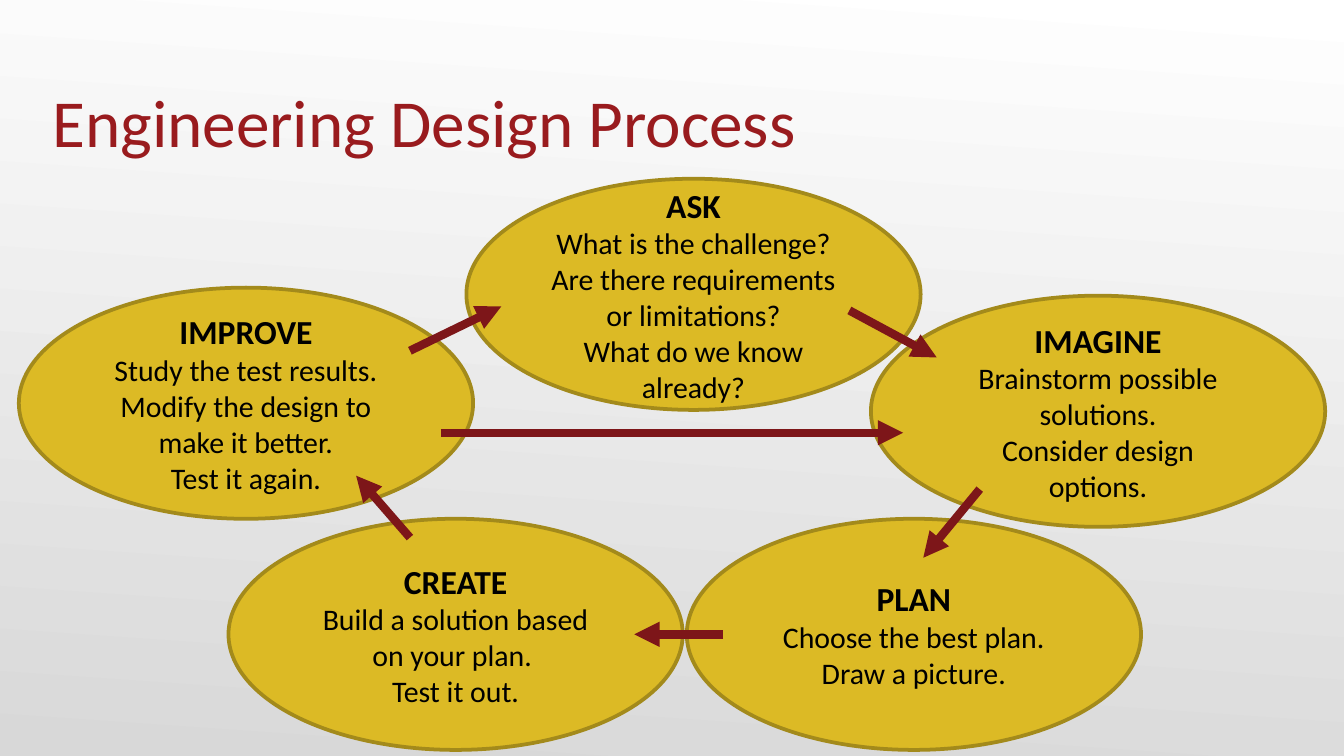
from dataclasses import dataclass

from lxml import etree
from pptx import Presentation
from pptx import util as u
from pptx.dml.color import RGBColor
from pptx.enum import shapes, text
from pptx.oxml import ns
from pptx.slide import Slide


@dataclass(frozen=True)
class Theme:
    font: str = "Calibri"
    title: RGBColor = RGBColor(0x99, 0x1B, 0x1E)
    ink: RGBColor = RGBColor(0, 0, 0)
    oval: RGBColor = RGBColor(0xDC, 0xBA, 0x25)
    outline: RGBColor = RGBColor(0xA3, 0x8A, 0x1B)
    arrow: RGBColor = RGBColor(0x7D, 0x16, 0x19)
    backdrop: tuple[RGBColor, RGBColor] = (
        RGBColor(0xFF, 0xFF, 0xFF),
        RGBColor(0xD8, 0xD8, 0xD8),
    )
    title_size: int = 36
    heading_size: int = 18
    body_size: int = 16
    outline_width: float = 2
    arrow_width: float = 4.5


@dataclass(frozen=True)
class Step:
    left: float
    top: float
    heading: str
    lines: tuple[str, ...]


@dataclass(frozen=True)
class Arrow:
    start: tuple[float, float]
    end: tuple[float, float]


THEME = Theme()
OVAL_WIDTH, OVAL_HEIGHT = 3.38, 1.72
LOWER_ROW = 3.86

STEPS = (
    Step(3.47, 1.33, "ASK", (
        "What is the challenge?",
        "Are there requirements or limitations?",
        "What do we know already?",
    )),
    Step(6.48, 2.2, "IMAGINE", (
        "Brainstorm possible solutions.",
        "Consider design options.",
    )),
    Step(5.11, LOWER_ROW, "PLAN", ("Choose the best plan.", "Draw a picture.")),
    Step(1.7, LOWER_ROW, "CREATE", (
        "Build a solution based on your plan. ",
        "Test it out.",
    )),
    Step(0.14, 2.14, "IMPROVE", (
        "Study the test results.",
        "Modify the design to make it better.",
        "Test it again.",
    )),
)

ARROWS = (
    Arrow((6.32, 2.31), (6.97, 2.66)),
    Arrow((7.29, 3.64), (6.87, 4.15)),
    Arrow((5.38, 4.72), (4.72, 4.72)),
    Arrow((3.05, 4), (2.65, 3.54)),
    Arrow((3.05, 2.61), (3.73, 2.28)),
    Arrow((3.28, 3.22), (6.72, 3.22)),
)


def paint_background(page: Slide) -> None:
    fill = page.background.fill
    fill.gradient()
    fill.gradient_angle = 360 - 94
    for position, (stop, color) in enumerate(zip(fill.gradient_stops, THEME.backdrop)):
        stop.position = position
        stop.color.rgb = color


def format_paragraph(para, size: float, color: RGBColor, bold: bool = False) -> None:
    for span in para.runs:
        span.font.name = THEME.font
        span.font.size = u.Pt(size)
        span.font.color.rgb = color
        span.font.bold = bold


def draw_title(page: Slide, wording: str) -> None:
    box = page.shapes.add_textbox(
        u.Inches(0.39), u.Inches(0.26), u.Inches(9), u.Inches(0.94)
    )
    frame = box.text_frame
    frame.word_wrap = True
    frame.vertical_anchor = text.MSO_ANCHOR.BOTTOM
    frame.margin_left = frame.margin_right = frame.margin_bottom = 0
    frame.text = wording
    format_paragraph(frame.paragraphs[0], THEME.title_size, THEME.title)


def draw_step(page: Slide, step: Step) -> None:
    oval = page.shapes.add_shape(
        shapes.MSO_SHAPE.OVAL,
        u.Inches(step.left), u.Inches(step.top),
        u.Inches(OVAL_WIDTH), u.Inches(OVAL_HEIGHT),
    )
    oval.shadow.inherit = False
    oval.fill.solid()
    oval.fill.fore_color.rgb = THEME.oval
    oval.line.color.rgb = THEME.outline
    oval.line.width = u.Pt(THEME.outline_width)
    frame = oval.text_frame
    frame.word_wrap = True
    frame.vertical_anchor = text.MSO_ANCHOR.MIDDLE
    frame.text = "\n".join((step.heading, *step.lines))
    for index, para in enumerate(frame.paragraphs):
        para.alignment = text.PP_ALIGN.CENTER
        is_heading = index == 0
        size = THEME.heading_size if is_heading else THEME.body_size
        format_paragraph(para, size, THEME.ink, is_heading)


def draw_arrow(page: Slide, arrow: Arrow) -> None:
    points = [u.Inches(value) for value in (*arrow.start, *arrow.end)]
    connector = page.shapes.add_connector(shapes.MSO_CONNECTOR.STRAIGHT, *points)
    connector.line.color.rgb = THEME.arrow
    connector.line.width = u.Pt(THEME.arrow_width)
    properties = connector.element.spPr
    outline = properties.find(ns.qn("a:ln"))
    etree.SubElement(outline, ns.qn("a:tailEnd"), type="triangle")
    etree.SubElement(properties, ns.qn("a:effectLst"))


def main() -> None:
    deck = Presentation()
    deck.slide_width = u.Inches(10)
    deck.slide_height = u.Inches(10 * 9 / 16)
    page = deck.slides.add_slide(deck.slide_layouts[6])
    paint_background(page)
    draw_title(page, "Engineering Design Process")
    for step in STEPS:
        draw_step(page, step)
    for arrow in ARROWS:
        draw_arrow(page, arrow)
    deck.save("out.pptx")


if __name__ == "__main__":
    main()
